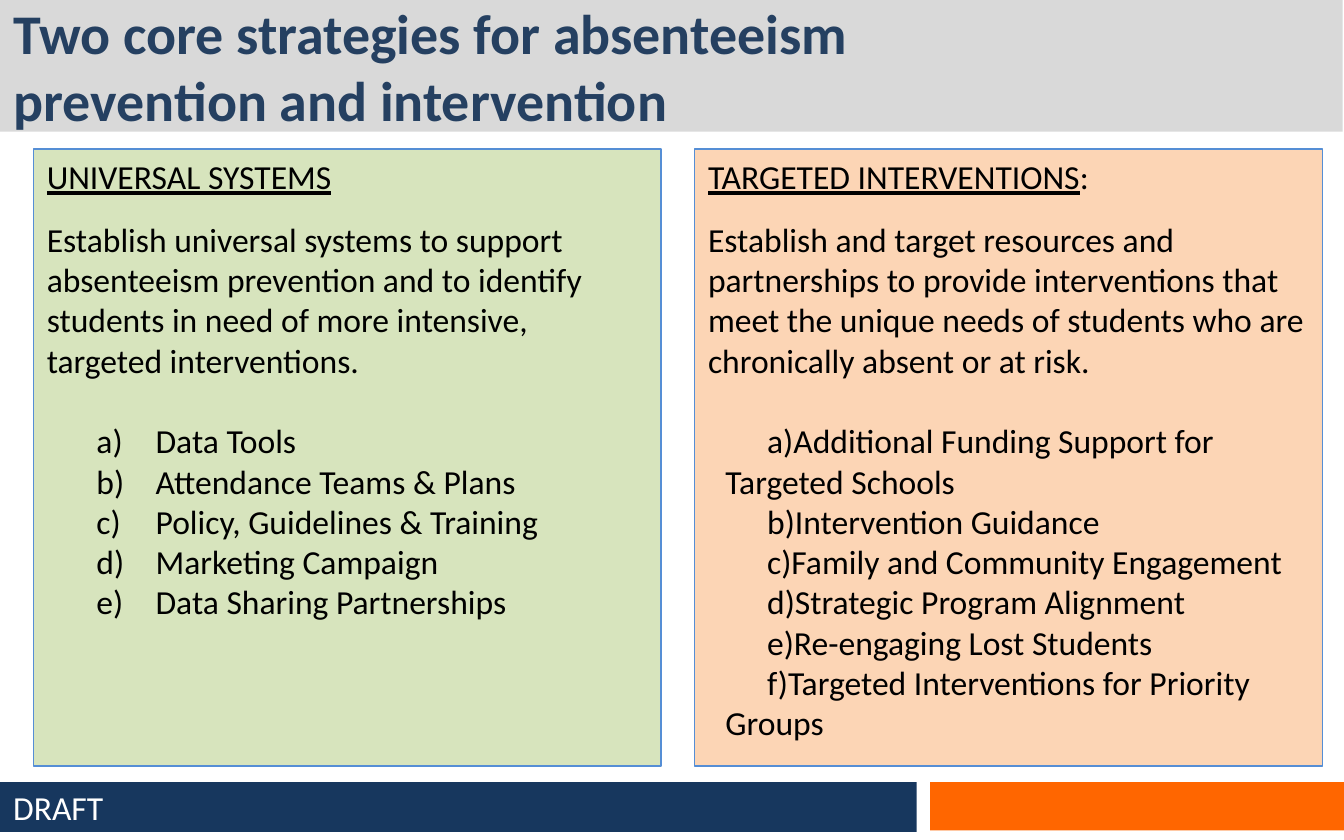
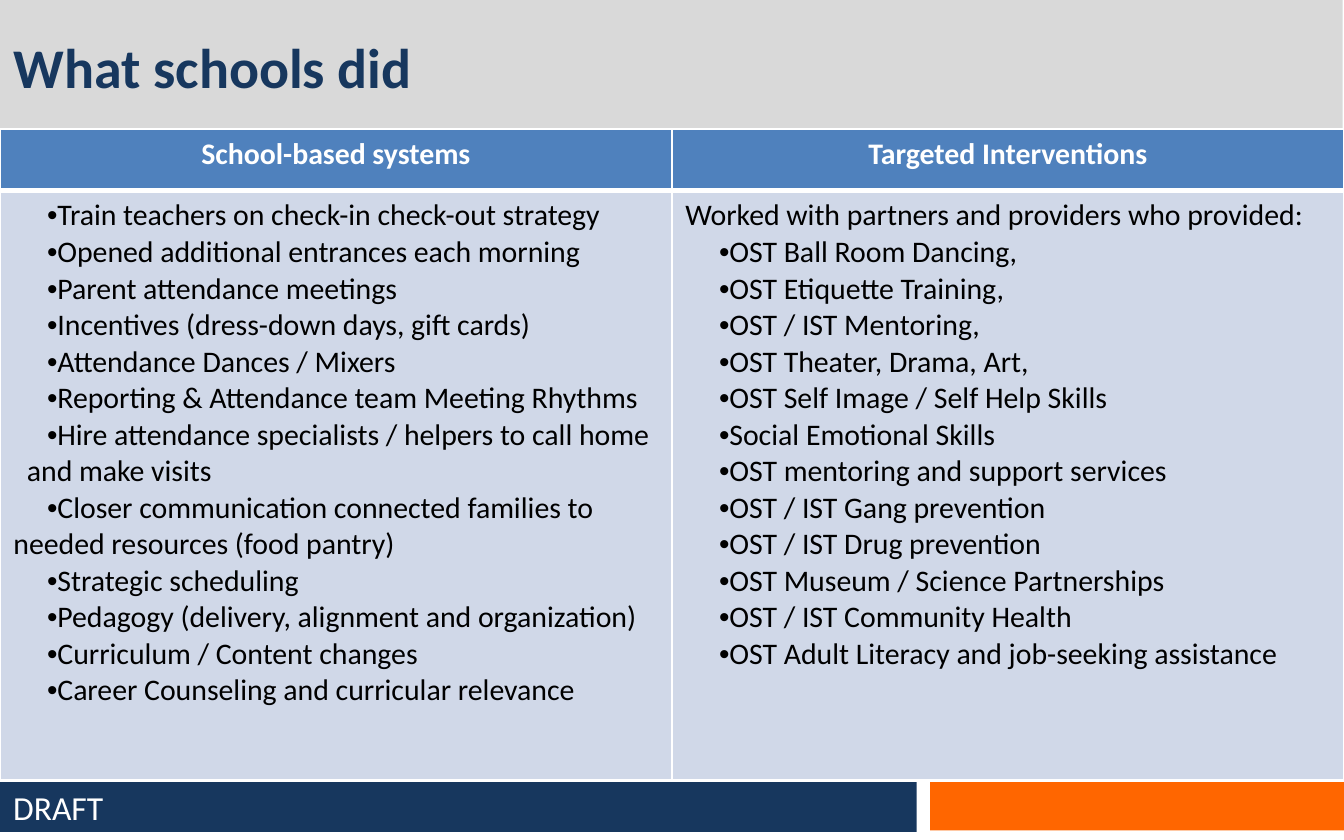
"""Builds two slides on preventing absenteeism in schools."""
from dataclasses import dataclass

from lxml import etree
from pptx import Presentation
from pptx.dml.color import RGBColor
from pptx.enum.shapes import MSO_SHAPE
from pptx.enum.text import MSO_ANCHOR, MSO_AUTO_SIZE, PP_ALIGN
from pptx.oxml.ns import qn
from pptx.util import Inches, Pt

RECT = MSO_SHAPE.RECTANGLE
TOP, MIDDLE = MSO_ANCHOR.TOP, MSO_ANCHOR.MIDDLE
LEFT, CENTER = PP_ALIGN.LEFT, PP_ALIGN.CENTER
NO_FIT = MSO_AUTO_SIZE.NONE

WHITE = RGBColor(0xFF, 0xFF, 0xFF)
BLACK = RGBColor(0x00, 0x00, 0x00)
GREY = RGBColor(0xD9, 0xD9, 0xD9)
NAVY = RGBColor(0x17, 0x37, 0x5E)
INK = RGBColor(0x25, 0x40, 0x61)
ORANGE = RGBColor(0xFF, 0x66, 0x00)
GREEN = RGBColor(0xD7, 0xE4, 0xBD)
PEACH = RGBColor(0xFC, 0xD5, 0xB5)
EDGE = RGBColor(0x55, 0x8E, 0xD5)
BLUE = RGBColor(0x4F, 0x81, 0xBD)
PALE = RGBColor(0xD0, 0xD8, 0xE8)

FONT, DOT_FONT = "Calibri", "Arial"
FOOT = (0, 5.82, 6.82, 0.37)
HEAD_H, BODY_H = 0.46, 4.38
DOT_X, WRAP_X = 0.25, 0.1


@dataclass
class Band:
    box: tuple
    fill: RGBColor


@dataclass
class Panel:
    left: float
    fill: RGBColor
    head: str
    tail: str
    text: str
    margin: float
    indent: float
    items: list


@dataclass
class Column:
    head: str
    intro: list
    items: list
    inset: tuple = ()


BANDS = [
    Band((0, 0, 9.99, 0.98), GREY),
    Band(FOOT, NAVY),
    Band((6.92, 5.82, 3.08, 0.36), ORANGE),
]

PANELS = [
    Panel(
        0.25, GREEN, "UNIVERSAL SYSTEMS", "",
        "Establish universal systems to support absenteeism prevention and to "
        "identify students in need of more intensive, targeted interventions.",
        0.81, -0.44,
        ["Data Tools", "Attendance Teams & Plans", "Policy, Guidelines & Training",
         "Marketing Campaign", "Data Sharing Partnerships"],
    ),
    Panel(
        5.17, PEACH, "TARGETED INTERVENTIONS", ":",
        "Establish and target resources and partnerships to provide interventions "
        "that meet the unique needs of students who are chronically absent or at risk.",
        0.13, 0.31,
        ["Additional Funding Support for Targeted Schools", "Intervention Guidance",
         "Family and Community Engagement", "Strategic Program Alignment",
         "Re-engaging Lost Students", "Targeted Interventions for Priority Groups"],
    ),
]

COLUMNS = [
    Column(
        "School-based systems", [],
        ["Train teachers on check-in check-out strategy",
         "Opened additional entrances each morning",
         "Parent attendance meetings",
         "Incentives (dress-down days, gift cards)",
         "Attendance Dances / Mixers",
         "Reporting & Attendance team Meeting Rhythms",
         "Hire attendance specialists / helpers to call home and make visits",
         "Closer communication connected families to needed resources (food pantry)",
         "Strategic scheduling",
         "Pedagogy (delivery, alignment and organization)",
         "Curriculum / Content changes",
         "Career Counseling and curricular relevance"],
        inset=(6,),
    ),
    Column(
        "Targeted Interventions", ["Worked with partners and providers who provided:"],
        ["OST Ball Room Dancing,", "OST Etiquette Training,", "OST / IST Mentoring,",
         "OST Theater, Drama, Art,", "OST Self Image / Self Help Skills",
         "Social Emotional Skills", "OST mentoring and support services",
         "OST / IST Gang prevention", "OST / IST Drug prevention",
         "OST Museum / Science Partnerships", "OST / IST Community Health",
         "OST Adult Literacy and job-seeking assistance"],
    ),
]


def place(box: tuple) -> list:
    return [Inches(n) for n in box]


def style(frame, size: float, color: RGBColor, bold=False, align=LEFT) -> None:
    for para in frame.paragraphs:
        para.alignment = align
        for run in para.runs:
            font = run.font
            font.name, font.size, font.bold = FONT, Pt(size), bold
            font.color.rgb = color


def mark(para, margin: float, indent: float, face: str, tag: str, **attrs: str) -> None:
    props = para._p.get_or_add_pPr()
    props.set("marL", str(Inches(margin)))
    props.set("indent", str(Inches(indent)))
    etree.SubElement(props, qn("a:buFont"), typeface=face)
    etree.SubElement(props, qn(tag), attrs)


def add_rect(slide, box: tuple, fill: RGBColor):
    shape = slide.shapes.add_shape(RECT, *place(box))
    shape.shadow.inherit = False
    shape.fill.solid()
    shape.fill.fore_color.rgb = fill
    shape.line.fill.background()
    return shape


def add_bands(slide) -> None:
    tree = slide.slide_layout.shapes.element
    for i, band in enumerate(BANDS):
        tree.insert(2 + i, add_rect(slide, band.box, band.fill).element)


def add_title(slide, text: str, color: RGBColor) -> None:
    title = slide.shapes.title
    title.left, title.top, title.width, title.height = place((0, 0, 7.92, 0.98))
    frame = title.text_frame
    frame.text = text
    frame.auto_size = NO_FIT
    frame.vertical_anchor = MIDDLE
    style(frame, 30, color, bold=True)


def add_foot(slide) -> None:
    frame = slide.shapes.add_textbox(*place(FOOT)).text_frame
    frame.text = "DRAFT"
    frame.word_wrap = True
    frame.vertical_anchor = MIDDLE
    style(frame, 18, WHITE)


def add_panel(slide, panel: Panel) -> None:
    shape = add_rect(slide, (panel.left, 1.11, 4.67, 4.59), panel.fill)
    shape.line.color.rgb = EDGE
    shape.line.width = Pt(0.75)
    frame = shape.text_frame
    frame.word_wrap = True
    frame.vertical_anchor = TOP
    frame.text = "\n".join([panel.head, panel.text, *panel.items])
    head, text, *items = frame.paragraphs
    head.runs[0].font.underline = True
    if panel.tail:
        head.add_run().text = panel.tail
    text.space_before = Pt(12)
    for para in items:
        mark(para, panel.margin, panel.indent, FONT, "a:buAutoNum", type="alphaLcParenR")
    items[0].space_before = Pt(21.6)
    style(frame, 18, BLACK)


def paint(cell, fill: RGBColor, top: float, base: float) -> None:
    props = cell._tc.get_or_add_tcPr()
    for side, width in (("L", 1), ("R", 1), ("T", top), ("B", base)):
        line = etree.SubElement(props, qn("a:ln" + side), w=str(Pt(width)))
        solid = etree.SubElement(line, qn("a:solidFill"))
        etree.SubElement(solid, qn("a:srgbClr"), val=str(WHITE))
    cell.fill.solid()
    cell.fill.fore_color.rgb = fill


def add_grid(slide) -> None:
    box = place((0, 0.96, 10, HEAD_H + BODY_H))
    table = slide.shapes.add_table(2, len(COLUMNS), *box).table
    table.rows[0].height, table.rows[1].height = place((HEAD_H, BODY_H))
    for i, col in enumerate(COLUMNS):
        head, body = table.cell(0, i), table.cell(1, i)
        paint(head, BLUE, 1, 3)
        paint(body, PALE, 3, 1)
        head.text_frame.text = col.head
        style(head.text_frame, 16, WHITE, bold=True, align=CENTER)
        body.text_frame.text = "\n".join(col.intro + col.items)
        for n, para in enumerate(body.text_frame.paragraphs[len(col.intro):]):
            margin = WRAP_X if n in col.inset else 0
            mark(para, margin, DOT_X - margin, DOT_FONT, "a:buChar", char="•")
        style(body.text_frame, 16, BLACK)


def main() -> None:
    deck = Presentation()
    deck.slide_width, deck.slide_height = place((10, 6.25))
    layout = deck.slide_layouts.get_by_name("Title Only")

    core = deck.slides.add_slide(layout)
    add_bands(core)
    add_title(core, "Two core strategies for absenteeism prevention and intervention", INK)
    for panel in PANELS:
        add_panel(core, panel)
    add_foot(core)

    done = deck.slides.add_slide(layout)
    add_title(done, "What schools did", NAVY)
    add_grid(done)
    add_foot(done)

    deck.save("out.pptx")


if __name__ == "__main__":
    main()
